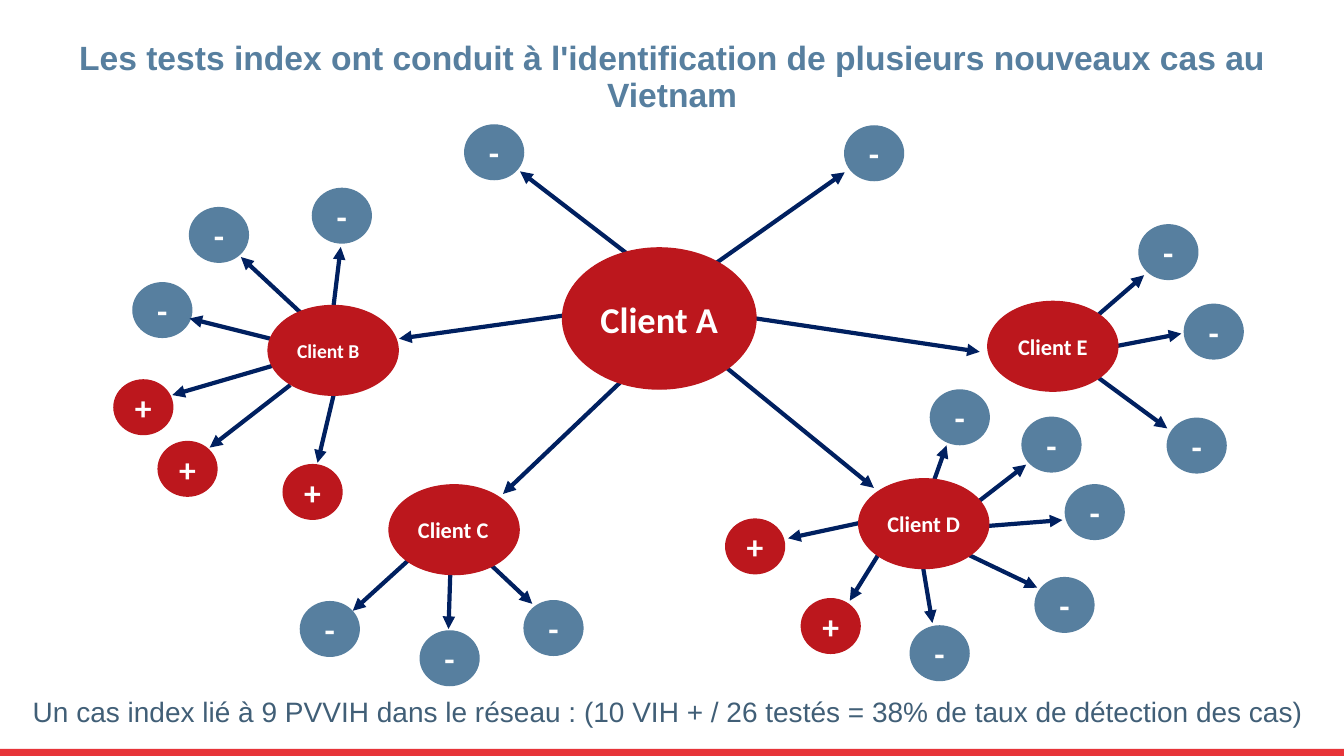
"""Builds the slide on index testing and the client network in Vietnam."""
from lxml.etree import SubElement
from pptx import Presentation
from pptx.dml.color import RGBColor
from pptx.enum.shapes import MSO_CONNECTOR as Link, MSO_SHAPE as Shape
from pptx.enum.text import MSO_ANCHOR as Anchor, PP_ALIGN as Align
from pptx.oxml.ns import qn
from pptx.util import Pt

COLORS = {"blue": "577F9F", "red": "BC171D", "navy": "002060",
          "slate": "415F77", "band": "E73439", "white": "FFFFFF"}

TITLE = "Les tests index ont conduit à l'identification de plusieurs nouveaux cas au Vietnam"
SUMMARY = ("Un cas index lié à 9 PVVIH dans le réseau : "
           "(10 VIH + / 26 testés = 38% de taux de détection des cas) ")

SLIDE_W, SLIDE_H = 960, 540
CONTACT_SIZE = (42, 39)
INDEX_SIZE = (138.2, 100.8)
PARTNER_SIZE = (92.9, 64.1)
INSET = 7.2
RESULT_COLORS = {"-": "blue", "+": "red"}

# name, left and top, size, text size, alignment, side inset
CLIENTS = [
    ("Client A", (401.8, 177.1), INDEX_SIZE, 26, Align.CENTER, 0),
    ("Client E", (705.6, 215.3), PARTNER_SIZE, 16, Align.CENTER, 0),
    ("Client D", (613.4, 342), PARTNER_SIZE, 16, Align.CENTER, 0),
    ("Client C", (277.9, 346.3), PARTNER_SIZE, 16, Align.LEFT, INSET),
    ("Client B", (191.5, 218.2), PARTNER_SIZE, 14, Align.LEFT, INSET),
]

# arrow start and end, from client A to each partner
PARTNER_LINKS = [
    ((540, 227.5), (699.8, 251.3)),
    ((519.1, 262.8), (624.2, 348.5)),
    ((478.1, 239.8), (359.3, 352.8)),
    ((423.4, 222.5), (285.1, 241.9)),
]

# test result, left and top, arrow start, arrow end
CONTACTS = {
    "Client A": [
        ("-", (332, 89.3), (481, 206.6), (371.5, 122.4)),
        ("-", (603.4, 90), (503.3, 193.7), (603.4, 123.1)),
    ],
    "Client B": [
        ("-", (223.2, 134.6), (238.3, 218.2), (243.4, 176.4)),
        ("-", (135.4, 148.3), (214.6, 223.2), (172.1, 183.6)),
        ("-", (95, 202), (193, 241.9), (135.4, 227.5)),
        ("+", (81.4, 271.4), (194.4, 261.4), (123.1, 282.2)),
        ("+", (113, 315.4), (207.4, 275), (149.8, 319.7)),
        ("+", (202.3, 331.9), (238.3, 282.2), (226.8, 330.5)),
    ],
    "Client C": [
        ("-", (214.6, 429.8), (306.7, 386.6), (252, 436.3)),
        ("-", (300.2, 450.7), (321.8, 404.6), (320.4, 449.3)),
        ("-", (374.4, 429.1), (331.9, 385.9), (380.2, 431.3)),
    ],
    "Client D": [
        ("+", (572.4, 427.7), (627.1, 396.7), (607, 429.1)),
        ("+", (518.4, 370.8), (613.4, 373.7), (563, 384.5)),
        ("-", (650.2, 447.1), (659.5, 406.1), (666, 445)),
        ("-", (739.4, 412.6), (692.6, 396.7), (740.9, 419.8)),
        ("-", (761, 346.3), (704.2, 375.8), (758.9, 371.5)),
        ("-", (730.1, 298.1), (694.8, 361.4), (733, 331.9)),
        ("-", (664.6, 278.6), (665.3, 348.5), (676.1, 318.2)),
    ],
    "Client E": [
        ("-", (813.6, 160.6), (784.8, 224.6), (817.2, 196.6)),
        ("-", (846, 217.4), (798.5, 247), (843.8, 238.3)),
        ("-", (833.8, 298.8), (784.8, 270), (833.8, 306)),
    ],
}


def rgb(name):
    return RGBColor.from_string(COLORS[name])


def points(*values):
    return [Pt(value) for value in values]


def write(holder, text, size, font, color, bold, align=Align.CENTER,
          anchor=Anchor.MIDDLE, inset=INSET):
    frame = holder.text_frame
    frame.word_wrap = True
    frame.vertical_anchor = anchor
    frame.margin_left = frame.margin_right = Pt(inset)
    frame.margin_top = frame.margin_bottom = Pt(3.6)
    paragraph = frame.paragraphs[0]
    paragraph.alignment = align
    run = paragraph.add_run()
    run.text = text
    run.font.size, run.font.name, run.font.bold = Pt(size), font, bold
    run.font.color.rgb = rgb(color)
    return paragraph


def add_person(slide, label, place, size, color, text_size,
               align=Align.CENTER, inset=INSET):
    person = slide.shapes.add_shape(Shape.OVAL, *points(*place, *size))
    person.shadow.inherit = False
    person.fill.solid()
    person.fill.fore_color.rgb = person.line.color.rgb = rgb(color)
    person.line.width = Pt(1)
    write(person, label, text_size, "Calibri", "white", True, align, inset=inset)


def add_arrow(slide, start, end):
    arrow = slide.shapes.add_connector(Link.STRAIGHT, *points(*start, *end))
    arrow.line.color.rgb = rgb("navy")
    arrow.line.width = Pt(3)
    SubElement(arrow.line._get_or_add_ln(), qn("a:tailEnd"), type="triangle")
    SubElement(arrow._element.spPr, qn("a:effectLst"))


def main():
    deck = Presentation()
    deck.slide_width, deck.slide_height = points(SLIDE_W, SLIDE_H)
    slide = deck.slides.add_slide(deck.slide_layouts[6])

    band = slide.shapes.add_shape(Shape.RECTANGLE, *points(0, 535, SLIDE_W, 5))
    band.shadow.inherit = False
    band.fill.solid()
    band.fill.fore_color.rgb = rgb("band")
    band.line.fill.background()

    title = slide.shapes.add_textbox(*points(3.6, 24.5, 953, 62.6))
    write(title, TITLE, 24, "Arial", "blue", True).line_spacing = 0.9

    contacts = [contact for group in CONTACTS.values() for contact in group]
    for result, place, _, _ in contacts:
        add_person(slide, result, place, CONTACT_SIZE, RESULT_COLORS[result], 24)
    for start, end in PARTNER_LINKS + [contact[2:] for contact in contacts]:
        add_arrow(slide, start, end)
    for name, place, size, text_size, align, inset in CLIENTS:
        add_person(slide, name, place, size, "red", text_size, align, inset)

    summary = slide.shapes.add_textbox(*points(3.6, 492.5, 953, 31.5))
    write(summary, SUMMARY, 20, "Arial", "slate", False, anchor=Anchor.TOP)

    deck.save("out.pptx")


if __name__ == "__main__":
    main()
